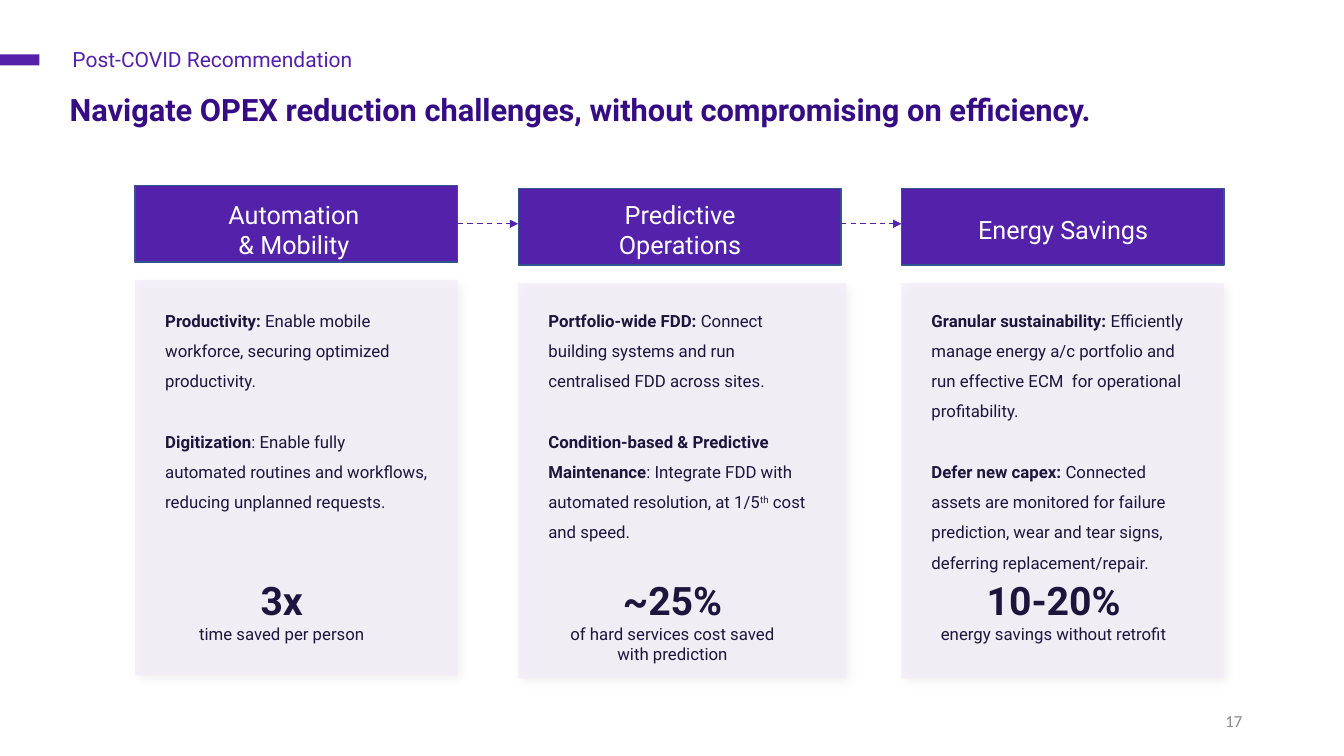
from pptx import Presentation
from pptx.dml.color import RGBColor
from pptx.enum.dml import MSO_LINE
from pptx.enum.shapes import MSO_CONNECTOR, MSO_SHAPE
from pptx.enum.text import MSO_ANCHOR, MSO_AUTO_SIZE, PP_ALIGN
from pptx.oxml import parse_xml
from pptx.oxml.ns import nsdecls, qn
from pptx.util import Inches, Pt
from lxml import etree

RECT, STRAIGHT, DASH = MSO_SHAPE.RECTANGLE, MSO_CONNECTOR.STRAIGHT, MSO_LINE.DASH
LEFT, CENTER, RIGHT = PP_ALIGN.LEFT, PP_ALIGN.CENTER, PP_ALIGN.RIGHT
TOP, MIDDLE, FIXED = MSO_ANCHOR.TOP, MSO_ANCHOR.MIDDLE, MSO_AUTO_SIZE.NONE

PURPLE, DEEP, INK, WHITE = "5321AA", "360C84", "1D153B", "FFFFFF"
PALE, EDGE, GREY = "F1ECF8", "31538F", "888888"

TITLE = "Navigate OPEX reduction challenges, without compromising on efficiency."
KICKER = "Post-COVID Recommendation"
PAGE = "17"

# Points are lists of (text, style); a label or figure has a right margin in inches.
COLUMNS = [
    {"label": [("Automation", 0.06), ("& Mobility", 0)], "label_top": 1.93,
     "rise": 0.03, "card_w": 3.2,
     "points": [[("Productivity: ", "bold"),
                 ("Enable mobile workforce, securing optimized productivity.", "")],
                [("Digitization", "bold"),
                 (": Enable fully automated routines and workflows, "
                  "reducing unplanned requests.", "")]],
     "figure": ("3x", 0), "caption": "time saved per person", "stat": (1.18, 3.23)},
    {"label": [("Predictive Operations", 0)], "label_top": 1.93,
     "rise": 0, "card_w": 3.25,
     "points": [[("Portfolio-wide FDD: ", "bold"),
                 ("Connect building systems and run centralised FDD across sites.", "")],
                [("Condition-based & Predictive Maintenance", "bold"),
                 (": Integrate FDD with automated resolution, at 1/5", ""),
                 ("th", "super"), (" cost and speed.", "")]],
     "figure": ("~25%", 0.19), "caption": "of hard services cost saved with prediction",
     "stat": (5.52, 2.49)},
    {"label": [("Energy Savings", 0)], "label_top": 2.08,
     "rise": 0, "card_w": 3.2,
     "points": [[("Granular sustainability: ", "bold"),
                 ("Efficiently manage energy a/c portfolio and run effective ECM  "
                  "for operational profitability.", "")],
                [("Defer new capex: ", "bold"),
                 ("Connected assets are monitored for failure prediction, wear and "
                  "tear signs, deferring replacement/repair.", "")]],
     "figure": ("10-20%", 0.1), "caption": "energy savings without retrofit",
     "stat": (9.13, 2.74)},
]

GRID_X, STEP, HEAD_W = 1.34, 3.8, 3.2
HEAD_Y, HEAD_H, CARD_Y, CARD_H = 1.87, 0.76, 2.81, 3.92
BODY_Y, STAT_Y, LINK_Y = 2.93, 5.67, 2.22


def color(code):
    return RGBColor.from_string(code)


def place(shape, x, y, w, h):
    shape.left, shape.top, shape.width, shape.height = map(Inches, (x, y, w, h))


def block(slide, x, y, w, h, fill, edge=None):
    """Add a flat rectangle, outlined only if an edge colour is given."""
    shape = slide.shapes.add_shape(RECT, *map(Inches, (x, y, w, h)))
    shape.shadow.inherit = False
    shape.fill.solid()
    shape.fill.fore_color.rgb = color(fill)
    if edge:
        shape.line.color.rgb = color(edge)
        shape.line.width = Pt(1)
    else:
        shape.line.fill.background()
    return shape


def soften(card):
    """Make the fill partly clear and add a faint shadow."""
    props = card._element.spPr
    tint = props.find(qn("a:solidFill"))[0]
    etree.SubElement(tint, qn("a:alpha")).set("val", "70000")
    props.find(qn("a:effectLst")).append(parse_xml(
        f'<a:outerShdw {nsdecls("a")} blurRad="{Pt(7)}" dist="{Pt(3)}" dir="2700000" '
        'algn="tl" rotWithShape="0"><a:srgbClr val="000000"><a:alpha val="8000"/>'
        '</a:srgbClr></a:outerShdw>'))


def style(run, size, code, bold=False, face="Roboto"):
    font = run.font
    font.name, font.size, font.bold = face, Pt(size), bold
    font.color.rgb = color(code)


def frame(shape, anchor=TOP):
    text = shape.text_frame
    text.word_wrap, text.auto_size, text.vertical_anchor = True, FIXED, anchor
    return text


def box(slide, x, y, w, h, anchor=TOP):
    return frame(slide.shapes.add_textbox(*map(Inches, (x, y, w, h))), anchor)


def fill_line(text, words, size, code, bold=False, align=LEFT, margin=0,
              face="Roboto", first=True):
    """Write one paragraph, optionally with a right margin."""
    para = text.paragraphs[0] if first else text.add_paragraph()
    para.text, para.alignment = words, align
    if margin:
        para._p.get_or_add_pPr().set("marR", str(Inches(margin)))
    style(para.runs[0], size, code, bold, face)


def write_points(text, points):
    for i, point in enumerate(points):
        para = text.add_paragraph() if i else text.paragraphs[0]
        para.line_spacing = 1.5
        if i:
            para.space_before = Pt(21.6)
        for words, look in point:
            run = para.add_run()
            run.text = words
            style(run, 12, INK, look == "bold")
            if look == "super":
                run._r.get_or_add_rPr().set("baseline", "30000")


def link(slide, x, end):
    line = slide.shapes.add_connector(
        STRAIGHT, *map(Inches, (x, LINK_Y, end, LINK_Y)))
    line.line.color.rgb = color(PURPLE)
    line.line.width, line.line.dash_style = Pt(1), DASH
    etree.SubElement(line.line._get_or_add_ln(), qn("a:tailEnd")).set("type", "triangle")
    etree.SubElement(line._element.spPr, qn("a:effectLst"))
    return line


def draw_column(slide, x, col):
    rise = col["rise"]
    soften(block(slide, x, CARD_Y - rise, col["card_w"], CARD_H, PALE))
    head = block(slide, x, HEAD_Y - rise, HEAD_W, HEAD_H, PURPLE, EDGE)
    label = box(slide, x + 0.45, col["label_top"], 2.31, 0.71)
    for i, (words, margin) in enumerate(col["label"]):
        fill_line(label, words, 18, WHITE, align=CENTER, margin=margin, first=i == 0)
    write_points(box(slide, x + 0.2, BODY_Y, 2.81, 2.36), col["points"])
    left, width = col["stat"]
    stat = box(slide, left, STAT_Y, width, 0.98)
    words, margin = col["figure"]
    fill_line(stat, words, 28, INK, True, CENTER, margin)
    fill_line(stat, col["caption"], 12, INK, align=CENTER, first=False)
    return head


def main():
    deck = Presentation()
    deck.slide_width, deck.slide_height = Inches(13.33), Inches(7.5)
    slide = deck.slides.add_slide(deck.slide_layouts[5])

    title = slide.shapes.title
    place(title, 0.59, 0.85, 12.74, 0.47)
    fill_line(frame(title), TITLE, 22, DEEP, True)
    block(slide, 0, 0.54, 0.39, 0.11, PURPLE)
    fill_line(box(slide, 0.62, 0.41, 3.92, 0.35), KICKER, 15, PURPLE)
    fill_line(box(slide, 9.42, 6.95, 3, 0.4, MIDDLE), PAGE, 12, GREY,
              align=RIGHT, face="Calibri")

    lefts = [GRID_X + i * STEP for i in range(len(COLUMNS))]
    heads = [draw_column(slide, x, col) for x, col in zip(lefts, COLUMNS)]
    links = [link(slide, x + HEAD_W, x + STEP) for x in lefts[:-1]]
    links[0].begin_connect(heads[0], 3)
    deck.save("out.pptx")


if __name__ == "__main__":
    main()
